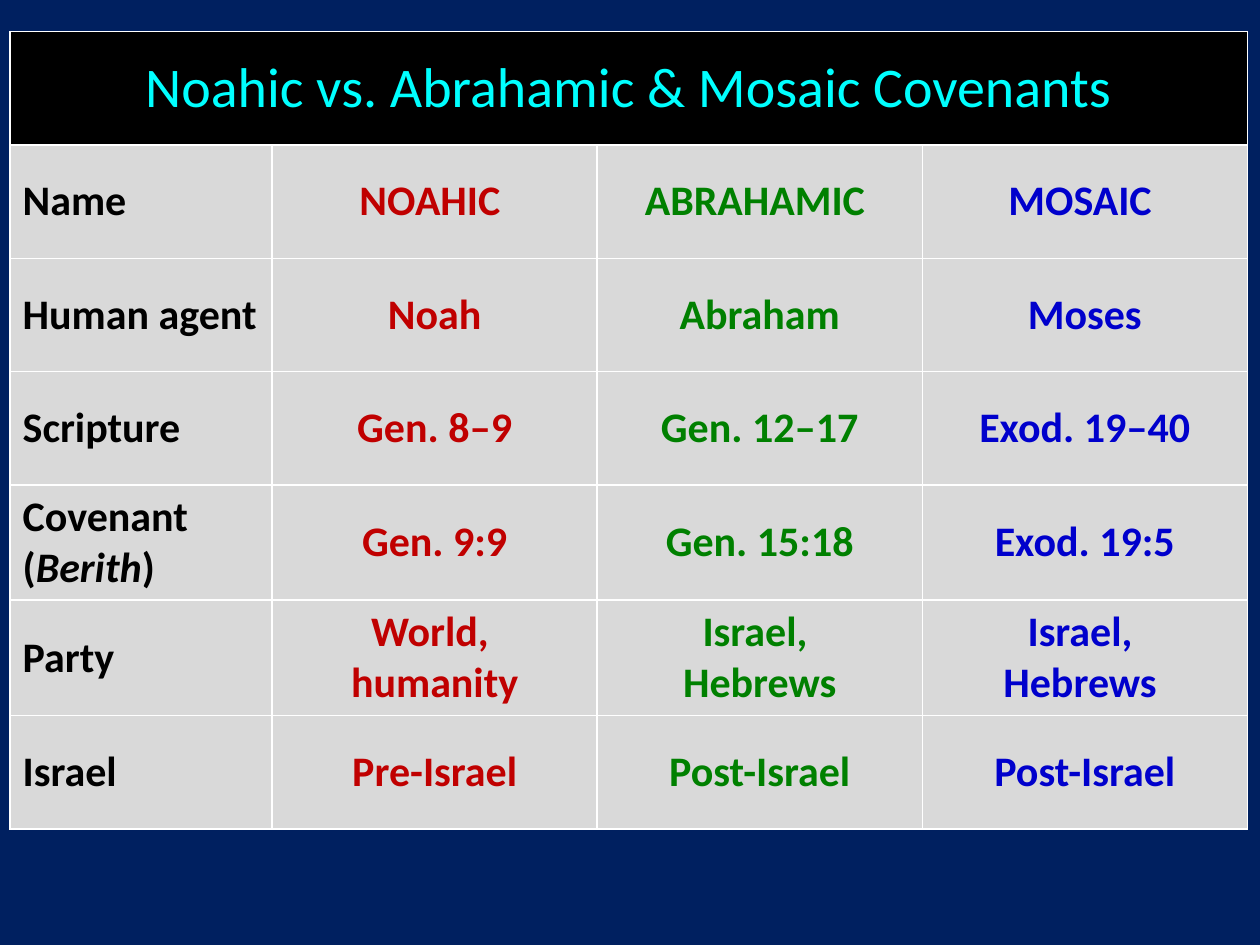
from dataclasses import dataclass

from lxml.etree import SubElement
from pptx import Presentation
from pptx.dml.color import RGBColor
from pptx.enum.text import MSO_ANCHOR, PP_ALIGN
from pptx.oxml.ns import qn
from pptx.table import _Cell
from pptx.util import Inches, Pt


@dataclass(frozen=True)
class Theme:
    font: str = "Calibri"
    back: str = "002060"
    band: str = "000000"
    body: str = "D9D9D9"
    line: str = "FFFFFF"
    title: str = "00FFFF"
    label: str = "000000"
    head_size: int = 32
    text_size: int = 24
    line_width: int = 1


@dataclass(frozen=True)
class Column:
    color: str
    width: float
    align: PP_ALIGN
    cells: tuple[str, ...]


@dataclass(frozen=True)
class Style:
    fill: str
    color: str
    size: int
    bold: bool
    align: PP_ALIGN


THEME = Theme()
TITLE = "Noahic vs. Abrahamic & Mosaic Covenants"
ROW = 0.9

# A newline starts a paragraph; asterisks enclose italic words.
COLUMNS = (
    Column(THEME.label, 2.08, PP_ALIGN.LEFT, (
        "Name", "Human agent", "Scripture", "Covenant (*Berith*)",
        "Party", "Israel")),
    Column("C00000", 2.58, PP_ALIGN.CENTER, (
        "NOAHIC ", "Noah", "Gen. 8‒9", "Gen. 9:9",
        "World, \nhumanity", "Pre-Israel")),
    Column("008000", 2.58, PP_ALIGN.CENTER, (
        "ABRAHAMIC ", "Abraham", "Gen. 12‒17", "Gen. 15:18",
        "Israel, \nHebrews", "Post-Israel")),
    Column("0000CC", 2.58, PP_ALIGN.CENTER, (
        "MOSAIC ", "Moses", "Exod. 19‒40", "Exod. 19:5",
        "Israel, \nHebrews ", "Post-Israel")),
)


def add_border(cell: _Cell) -> None:
    """Line all four sides; call before filling, as the schema puts lines first."""
    props = cell._tc.get_or_add_tcPr()
    for side in ("a:lnL", "a:lnR", "a:lnT", "a:lnB"):
        line = SubElement(props, qn(side), w=str(Pt(THEME.line_width)))
        fill = SubElement(line, qn("a:solidFill"))
        SubElement(fill, qn("a:srgbClr"), val=THEME.line)


def paint(cell: _Cell, fill: str) -> None:
    add_border(cell)
    cell.fill.solid()
    cell.fill.fore_color.rgb = RGBColor.from_string(fill)


def write(cell: _Cell, text: str, style: Style) -> None:
    paint(cell, style.fill)
    cell.vertical_anchor = MSO_ANCHOR.MIDDLE
    frame = cell.text_frame
    frame.text = text
    for para in frame.paragraphs:
        para.alignment = style.align
        parts = para.text.split("*")
        para.clear()
        for place, part in enumerate(parts):
            run = para.add_run()
            run.text = part
            font = run.font
            font.name = THEME.font
            font.size = Pt(style.size)
            font.bold = style.bold
            font.italic = place % 2 == 1
            font.color.rgb = RGBColor.from_string(style.color)


def main() -> None:
    deck = Presentation()
    deck.slide_width, deck.slide_height = Inches(10), Inches(7.5)
    slide = deck.slides.add_slide(deck.slide_layouts[6])
    back = slide.background.fill
    back.solid()
    back.fore_color.rgb = RGBColor.from_string(THEME.back)

    rows = len(COLUMNS[0].cells) + 1
    width = sum(col.width for col in COLUMNS)
    table = slide.shapes.add_table(
        rows, len(COLUMNS), Inches(0.08), Inches(0.25),
        Inches(width), Inches(ROW * rows)).table
    for row in table.rows:
        row.height = Inches(ROW)

    for c, col in enumerate(COLUMNS):
        table.columns[c].width = Inches(col.width)
        style = Style(THEME.body, col.color, THEME.text_size, True, col.align)
        for r, text in enumerate(col.cells, start=1):
            write(table.cell(r, c), text, style)

    head = table.cell(0, 0)
    head.merge(table.cell(0, len(COLUMNS) - 1))
    write(head, TITLE, Style(THEME.band, THEME.title, THEME.head_size,
                             False, PP_ALIGN.CENTER))
    for c in range(1, len(COLUMNS)):
        paint(table.cell(0, c), THEME.band)

    deck.save("out.pptx")


if __name__ == "__main__":
    main()
